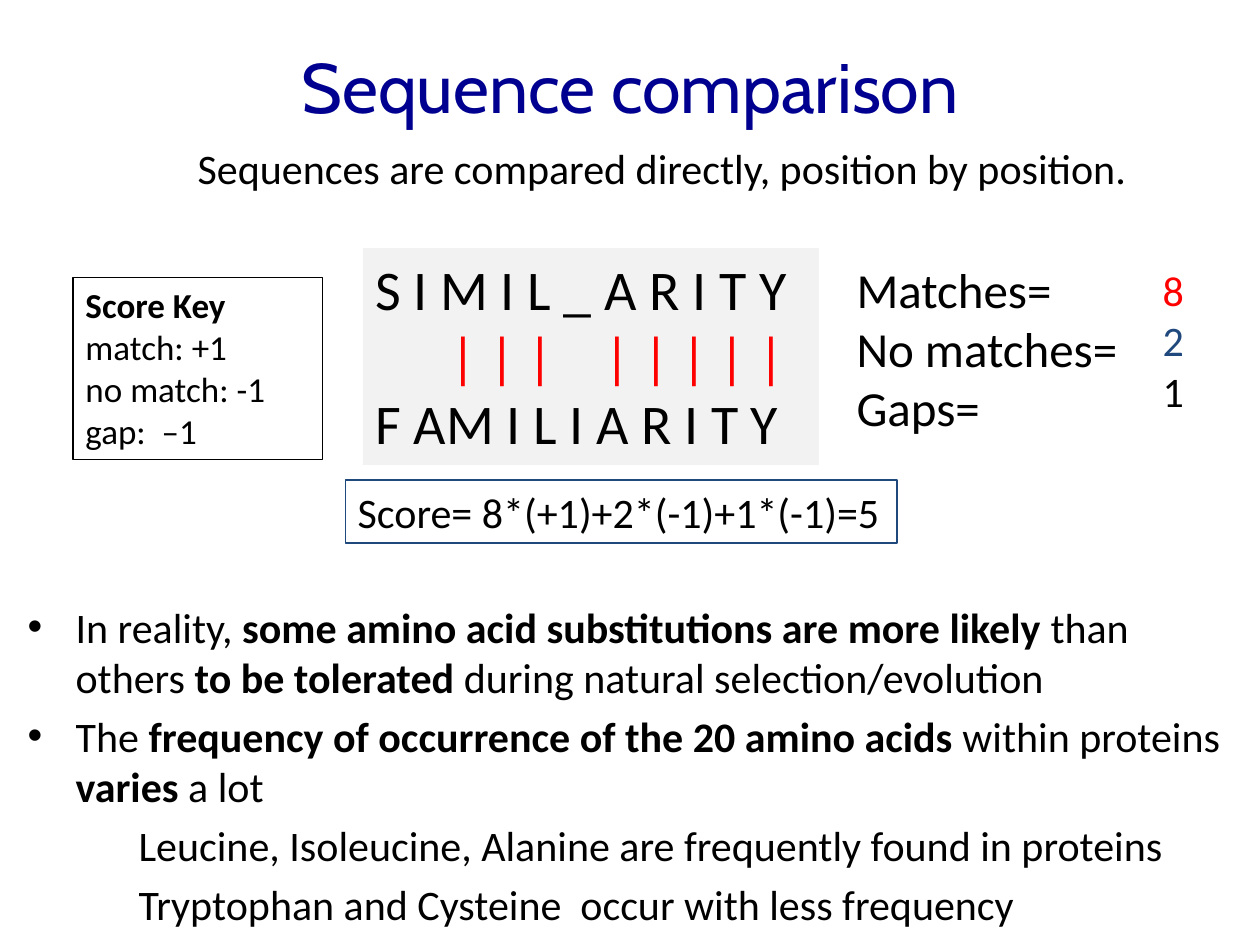
from pptx import Presentation
from pptx.dml.color import RGBColor
from pptx.enum.shapes import MSO_SHAPE
from pptx.enum.text import MSO_ANCHOR, MSO_AUTO_SIZE, PP_ALIGN
from pptx.oxml.ns import qn
from pptx.util import Inches, Pt
from lxml.etree import SubElement

COLORS = {"navy": "000090", "black": "000000", "red": "FF0000",
          "blue": "1F497D", "gray": "F2F2F2"}


def rgb(name):
    """Return the named colour."""
    return RGBColor.from_string(COLORS[name])


def place(sp, box):
    """Move a shape to a box of left, top, width and height in inches."""
    sp.left, sp.top, sp.width, sp.height = map(Inches, box)


def add_run(p, text, size=24, color="black", bold=False, font="Calibri"):
    """Append formatted text to a paragraph."""
    r = p.add_run()
    r.text = text
    r.font.size, r.font.bold, r.font.name = Pt(size), bold, font
    r.font.color.rgb = rgb(color)


def next_paragraph(tf, index):
    """Return the first paragraph of a frame or append another."""
    return tf.add_paragraph() if index else tf.paragraphs[0]


def add_box(s, box, lines, fill=None, line=None, size=24):
    """Add a rectangle or plain text box holding (text, format) lines."""
    if fill or line:
        sp = s.shapes.add_shape(MSO_SHAPE.RECTANGLE, *map(Inches, box))
        sp.shadow.inherit = False
        if fill:
            sp.fill.solid()
            sp.fill.fore_color.rgb = rgb(fill)
        else:
            sp.fill.background()
        if line:
            sp.line.color.rgb = rgb(line)
            sp.line.width = Pt(0.75)
        else:
            sp.line.fill.background()
    else:
        sp = s.shapes.add_textbox(*map(Inches, box))
    tf = sp.text_frame
    tf.word_wrap = True
    tf.vertical_anchor = MSO_ANCHOR.TOP
    for i, (text, style) in enumerate(lines):
        p = next_paragraph(tf, i)
        p.alignment = PP_ALIGN.LEFT
        add_run(p, text, **{"size": size, **style})
    return sp


def add_heading(s, title_box, intro_box):
    """Fill the title and the sentence below it."""
    place(s.shapes.title, title_box)
    p = s.shapes.title.text_frame.paragraphs[0]
    p.alignment = PP_ALIGN.CENTER
    add_run(p, "Sequence comparison", size=40, color="navy", font="Cabin")
    add_box(s, intro_box,
            [("Sequences are compared directly, position by position.", {})])


def add_alignment(s, box):
    """Show the two aligned words with their match bars on tab stops."""
    sp = add_box(s, box, [("S I M I L _ A R I T Y", {}),
                          ("\t| | |\t| | | | |", {"color": "red"}),
                          ("F AM I L I A R I T Y", {})], fill="gray", size=32)
    pPr = sp.text_frame.paragraphs[1]._p.get_or_add_pPr()
    tabs = SubElement(pPr, qn("a:tabLst"))
    for stop in (0.6, 1.82):
        SubElement(tabs, qn("a:tab"), pos=str(Inches(stop)), algn="l")


def add_score_key(s, box):
    """Add the framed list of scoring rules."""
    add_box(s, box, [("Score Key", {"bold": True}), ("match: +1", {}),
                     ("no match: -1", {}), ("gap:  –1", {})],
            line="black", size=20)


def add_counts(s, label_box, value_box):
    """Add the count labels and their coloured values."""
    labels = ("Matches=", "No matches=", "Gaps=")
    values = (("8", "red"), ("2", "blue"), ("1", "black"))
    add_box(s, label_box, [(label, {}) for label in labels], size=28)
    add_box(s, value_box, [(v, {"color": color}) for v, color in values])


def add_score(s, box):
    """Add the framed score formula."""
    add_box(s, box, [("Score= 8*(+1)+2*(-1)+1*(-1)=5", {})], line="blue")


def add_remarks(s, box):
    """Fill the body list; every second part of an item is bold."""
    items = [
        (0, ["In reality, ", "some amino acid substitutions are more likely ",
             "than others ", "to be tolerated ",
             "during natural selection/evolution"]),
        (0, ["The ", "frequency of occurrence of the 20 amino acids ",
             "within proteins ", "varies", " a lot"]),
        (1, ["Leucine, Isoleucine, Alanine are frequently found in proteins"]),
        (1, ["Tryptophan and Cysteine  occur with less frequency"]),
    ]
    body = s.placeholders[1]
    place(body, box)
    tf = body.text_frame
    tf.auto_size = MSO_AUTO_SIZE.NONE
    for i, (level, parts) in enumerate(items):
        p = next_paragraph(tf, i)
        p.level = level
        pPr = p._p.get_or_add_pPr()
        pPr.set("marL", str(Inches(0.88 if level else 0.38)))
        pPr.set("indent", str(Inches(0 if level else -0.38)))
        if level:
            SubElement(pPr, qn("a:buNone"))
        else:
            SubElement(pPr, qn("a:buChar"), char="•")
        for j, text in enumerate(parts):
            add_run(p, text, bold=j % 2 == 1)


def main():
    """Build the slide and save it."""
    prs = Presentation()
    prs.slide_width, prs.slide_height = Inches(10), Inches(7.5)
    s = prs.slides.add_slide(prs.slide_layouts[1])
    add_heading(s, (0.5, 0.05, 9, 1.25), (1.47, 1.08, 7.58, 0.5))
    add_alignment(s, (2.88, 1.97, 3.62, 1.72))
    add_score_key(s, (0.58, 2.2, 1.98, 1.45))
    add_counts(s, (6.7, 2.01, 2.3, 1.51), (9.13, 2.05, 0.37, 1.31))
    add_score(s, (2.74, 3.81, 4.38, 0.5))
    add_remarks(s, (0.12, 4.72, 9.88, 2.07))
    prs.save("out.pptx")


if __name__ == "__main__":
    main()
